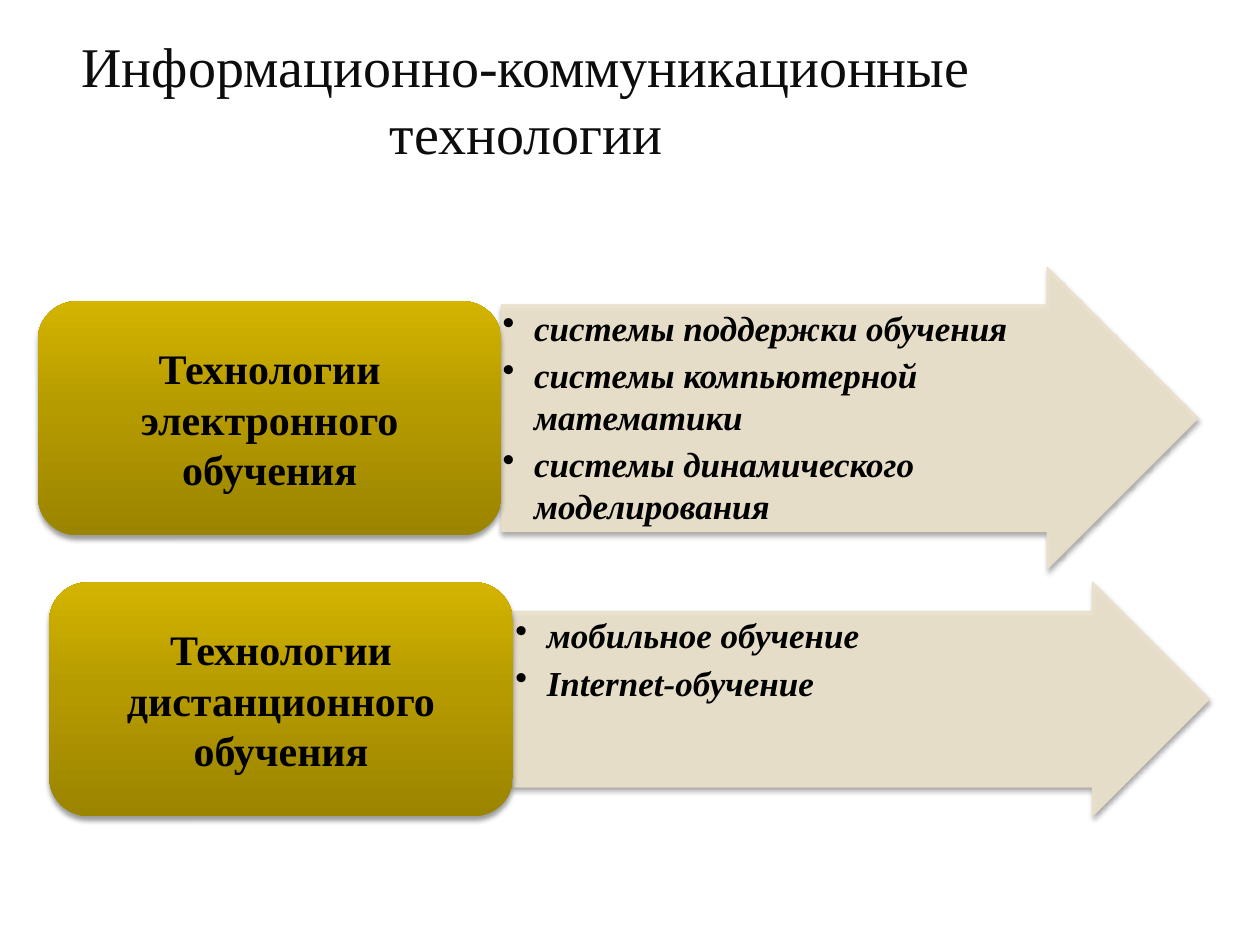
"""Build a slide on information and communication technologies."""
from copy import deepcopy

from lxml import etree
from pptx import Presentation
from pptx import util as u
from pptx.dml import color
from pptx.enum import shapes, text
from pptx.oxml import ns

FONT = "Times New Roman"
TITLE = "Информационно-коммуникационные технологии"
ROWS = [
    {"label": "Технологии электронного обучения", "left": 0.3, "middle": 3.32,
     "arrow_height": 2.4, "inset": 0.01,
     "items": ["системы поддержки обучения", "системы компьютерной математики",
               "системы динамического моделирования"]},
    {"label": "Технологии дистанционного обучения", "left": 0.39, "middle": 5.55,
     "arrow_height": 1.86, "inset": 0.02,
     "items": ["мобильное обучение", "Internet-обучение"]},
]
LABEL_WIDTH, LABEL_HEIGHT, LABEL_PAD = 3.68, 1.86, 0.09
ARROW_WIDTH, SHAFT_SHARE = 5.53, 0.75
GRADIENT = [(0, "9B8400"), (0.55, "B69B00"), (1, "D4B400")]


def rgb(value):
    return color.RGBColor.from_string(value)


def add_xml(parent, tag, **attributes):
    return etree.SubElement(parent, ns.qn(tag), attributes)


def set_alpha(fill_parent, percent):
    for clr in fill_parent.iter(ns.qn("a:srgbClr")):
        add_xml(clr, "a:alpha", val=str(percent * 1000))


def add_shadow(shape):
    shape.shadow.inherit = False
    effects = shape._element.spPr.find(ns.qn("a:effectLst"))
    shadow = add_xml(effects, "a:outerShdw", blurRad=str(u.Pt(3.1)), dist=str(u.Pt(2)),
                     dir="5400000", rotWithShape="0")
    add_xml(shadow, "a:srgbClr", val="000000")
    set_alpha(shadow, 38)


def add_preset(slide, kind, place):
    shape = slide.shapes.add_shape(kind, *map(u.Inches, place))
    add_shadow(shape)
    return shape


def add_text(slide, place, lines, size, ink="000000", bold=False, bullets=False, inset=None):
    box = slide.shapes.add_textbox(*map(u.Inches, place))
    frame = box.text_frame
    frame.word_wrap = True
    frame.vertical_anchor = text.MSO_ANCHOR.TOP if bullets else text.MSO_ANCHOR.MIDDLE
    if inset is not None:
        frame.margin_left = frame.margin_right = u.Inches(inset)
        frame.margin_top = frame.margin_bottom = u.Inches(inset)
    frame.text = "\n".join(lines)
    for para in frame.paragraphs:
        if bullets:
            para.level = 1
            para.space_after = u.Pt(size * 0.15)
            props = para._p.get_or_add_pPr()
            props.set("marL", str(u.Inches(0.25)))
            props.set("indent", str(u.Inches(-0.25)))
            add_xml(props, "a:buChar", char="•")
        para.alignment = text.PP_ALIGN.LEFT if bullets else text.PP_ALIGN.CENTER
        para.font.name, para.font.size = FONT, u.Pt(size)
        para.font.bold, para.font.italic = bold, bullets
        para.font.color.rgb = rgb(ink)
    return box


def add_arrow(slide, row):
    left, height = row["left"] + LABEL_WIDTH, row["arrow_height"]
    top = row["middle"] - height / 2
    arrow = add_preset(slide, shapes.MSO_SHAPE.RIGHT_ARROW, (left, top, ARROW_WIDTH, height))
    arrow.adjustments[0], arrow.adjustments[1] = SHAFT_SHARE, 0.5
    arrow.fill.solid()
    arrow.fill.fore_color.rgb = rgb("ECE3CC")
    arrow.line.color.rgb = rgb("E8DEC7")
    arrow.line.width = u.Pt(0.5)
    for tag in ("a:solidFill", "a:ln"):
        set_alpha(arrow._element.spPr.find(ns.qn(tag)), 90)
    shaft = height * SHAFT_SHARE
    place = (left, row["middle"] - shaft / 2, ARROW_WIDTH - shaft / 2, shaft)
    add_text(slide, place, row["items"], 20, bold=True, bullets=True, inset=row["inset"])


def add_label(slide, row):
    left, top = row["left"], row["middle"] - LABEL_HEIGHT / 2
    plate = add_preset(slide, shapes.MSO_SHAPE.ROUNDED_RECTANGLE,
                       (left, top, LABEL_WIDTH, LABEL_HEIGHT))
    plate.line.fill.background()
    plate.fill.gradient()
    plate.fill.gradient_angle = 90
    stops = plate._element.spPr.find(ns.qn("a:gradFill")).find(ns.qn("a:gsLst"))
    stops.insert(1, deepcopy(stops[0]))
    for stop, (position, shade) in zip(plate.fill.gradient_stops, GRADIENT):
        stop.position = position
        stop.color.rgb = rgb(shade)
    place = (left + LABEL_PAD, top + LABEL_PAD,
             LABEL_WIDTH - 2 * LABEL_PAD, LABEL_HEIGHT - 2 * LABEL_PAD)
    add_text(slide, place, [row["label"]], 24, bold=True)


def main():
    deck = Presentation()
    deck.slide_width, deck.slide_height = u.Inches(10), u.Inches(7.5)
    slide = deck.slides.add_slide(deck.slide_layouts[6])
    add_text(slide, (0.23, 0.16, 7.89, 1.25), [TITLE], 32, ink="0D0D0D")
    for row in ROWS:
        add_arrow(slide, row)
        add_label(slide, row)
    deck.save("out.pptx")


if __name__ == "__main__":
    main()
